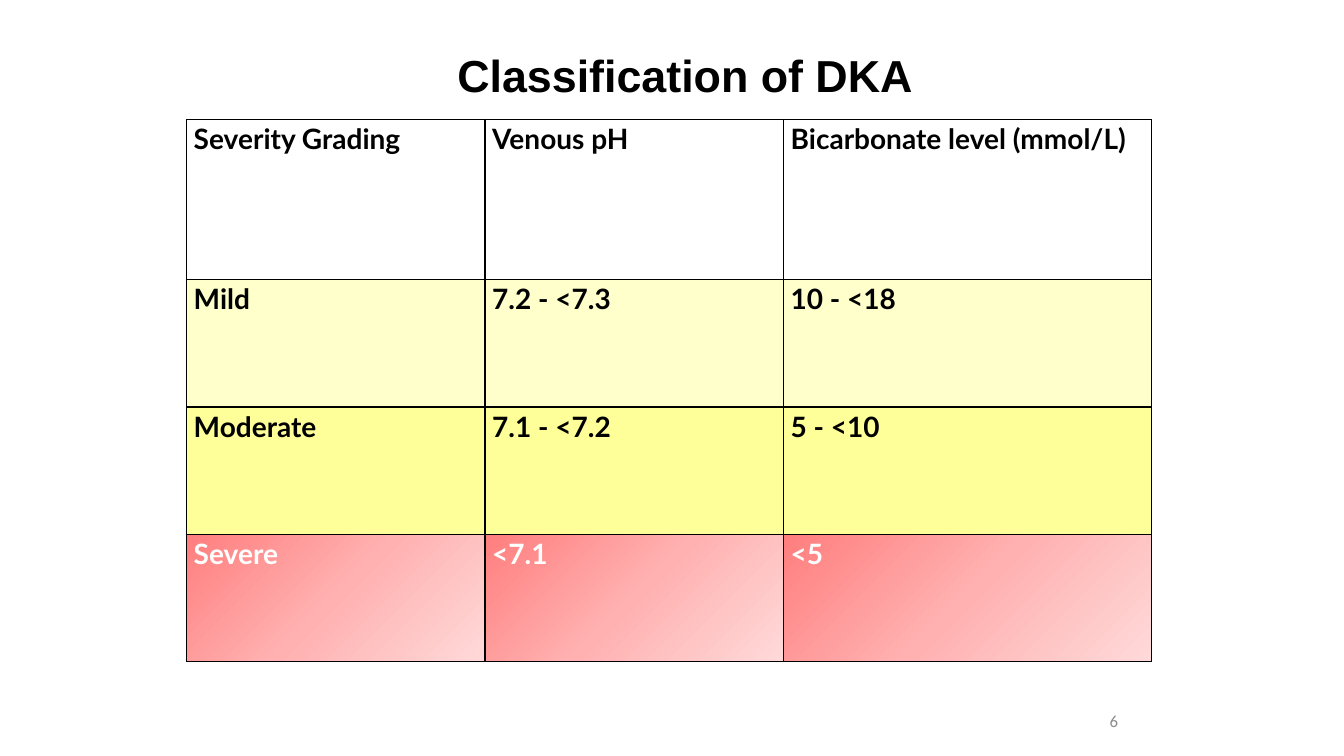
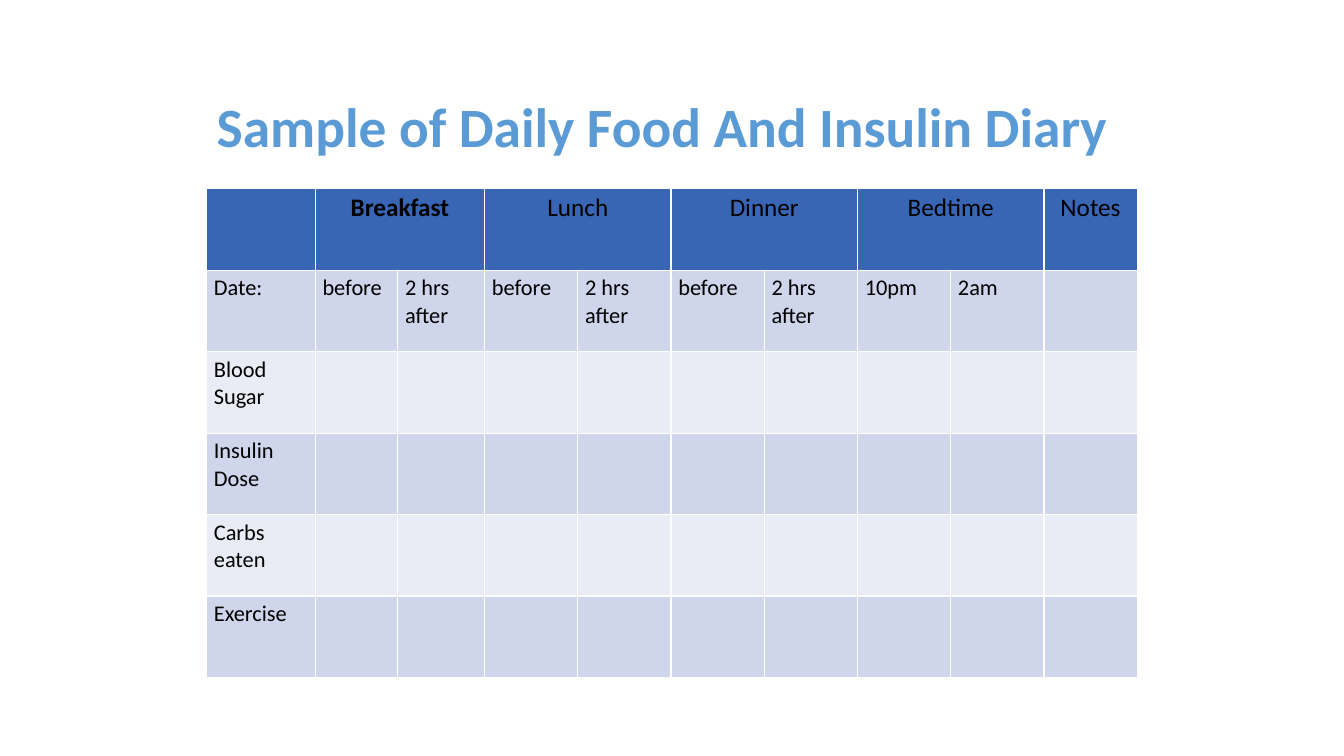
from lxml import etree
from pptx import Presentation
from pptx.dml.color import RGBColor
from pptx.enum.text import MSO_ANCHOR, MSO_AUTO_SIZE, PP_ALIGN
from pptx.oxml.ns import qn
from pptx.util import Pt

LEFT, CENTER, RIGHT = PP_ALIGN.LEFT, PP_ALIGN.CENTER, PP_ALIGN.RIGHT
MIDDLE = MSO_ANCHOR.MIDDLE
NO_AUTOFIT = MSO_AUTO_SIZE.NONE

BLACK = RGBColor(0x00, 0x00, 0x00)
WHITE = RGBColor(0xFF, 0xFF, 0xFF)
GRAY = RGBColor(0x8C, 0x8C, 0x8C)
TITLE_BLUE = RGBColor(0x5B, 0x9B, 0xD5)
HEADER_BLUE = RGBColor(0x39, 0x65, 0xB5)
BAND_DARK = RGBColor(0xCF, 0xD5, 0xEA)
BAND_LIGHT = RGBColor(0xE9, 0xEB, 0xF5)
PALE_YELLOW = RGBColor(0xFF, 0xFF, 0xCC)
YELLOW = RGBColor(0xFF, 0xFF, 0x99)
RED_GRADIENT = (
    (0, RGBColor(0xFF, 0x7E, 0x7E)),
    (50, RGBColor(0xFF, 0xB1, 0xB1)),
    (100, RGBColor(0xFF, 0xD9, 0xD9)),
)
GRADIENT_ANGLE = 45

SEVERITY_ROWS = [
    (("Severity Grading", "Venous pH", "Bicarbonate level (mmol/L)"), None, BLACK),
    (("Mild", "7.2 - <7.3", "10 - <18"), PALE_YELLOW, BLACK),
    (("Moderate", "7.1 - <7.2", "5 - <10"), YELLOW, BLACK),
    (("Severe", "<7.1", "<5"), RED_GRADIENT, WHITE),
]
SEVERITY_WIDTHS = [213.2, 213.2, 263]
SEVERITY_HEIGHTS = [114.4] + [91] * 3

MEALS = [("", 1), ("Breakfast", 2), ("Lunch", 2), ("Dinner", 2), ("Bedtime", 2), ("Notes", 1)]
DIARY_ROWS = [
    ["Date:"] + ["before", "2 hrs after"] * 3 + ["10pm", "2am"],
    ["Blood Sugar"],
    ["Insulin Dose"],
    ["Carbs eaten"],
    ["Exercise"],
]
DIARY_WIDTHS = [77.6, 59, 62] + [66.6] * 7
DIARY_HEIGHTS = [58.2] * (len(DIARY_ROWS) + 1)


def write_text(frame, text, font="Calibri", size=18, color=BLACK, bold=False,
               align=LEFT, line_spacing=None):
    frame.text = text
    paragraph = frame.paragraphs[0]
    paragraph.alignment = align
    if line_spacing:
        paragraph.line_spacing = line_spacing
    run_font = paragraph.runs[0].font
    run_font.name, run_font.size, run_font.bold = font, Pt(size), bold
    run_font.color.rgb = color


def set_frame(frame, side, top_bottom):
    frame.word_wrap = True
    frame.auto_size = NO_AUTOFIT
    frame.vertical_anchor = MIDDLE
    frame.margin_left = frame.margin_right = Pt(side)
    frame.margin_top = frame.margin_bottom = Pt(top_bottom)


def add_titled_slide(presentation, text, box, side, **text_format):
    slide = presentation.slides.add_slide(presentation.slide_layouts[5])
    title = slide.shapes.title
    title.left, title.top, title.width, title.height = map(Pt, box)
    set_frame(title.text_frame, side, 3.6)
    write_text(title.text_frame, text, bold=True, **text_format)
    return slide


def add_grid(slide, left, top, widths, heights):
    table = slide.shapes.add_table(len(heights), len(widths), Pt(left), Pt(top),
                                   Pt(sum(widths)), Pt(sum(heights))).table
    table.first_row = table.horz_banding = False
    for column, width in zip(table.columns, widths):
        column.width = Pt(width)
    for row, height in zip(table.rows, heights):
        row.height = Pt(height)
    return table


def add_solid_color(parent, color):
    fill = etree.SubElement(parent, qn("a:solidFill"))
    etree.SubElement(fill, qn("a:srgbClr"), val=str(color))


def style_cell(cell, fill, border, top_bottom):
    cell.margin_left = cell.margin_right = Pt(5.2)
    cell.margin_top = cell.margin_bottom = Pt(top_bottom)
    properties = cell._tc.get_or_add_tcPr()
    for edge in ("a:lnL", "a:lnR", "a:lnT", "a:lnB"):
        add_solid_color(etree.SubElement(properties, qn(edge), w=str(Pt(1))), border)
    if fill is None:
        cell.fill.background()
    elif isinstance(fill, RGBColor):
        cell.fill.solid()
        cell.fill.fore_color.rgb = fill
    else:
        gradient = etree.SubElement(properties, qn("a:gradFill"), rotWithShape="1")
        stops = etree.SubElement(gradient, qn("a:gsLst"))
        for position, color in fill:
            stop = etree.SubElement(stops, qn("a:gs"), pos=str(position * 1000))
            etree.SubElement(stop, qn("a:srgbClr"), val=str(color))
        etree.SubElement(gradient, qn("a:lin"), ang=str(GRADIENT_ANGLE * 60000), scaled="1")


def build_classification(presentation):
    slide = add_titled_slide(presentation, "Classification of DKA", (156.2, 21.6, 666.7, 63.4), 5,
                             font="Arial", size=32, align=CENTER)
    page_number = slide.shapes.add_textbox(Pt(635.8), Pt(500.4), Pt(167.8), Pt(28.8))
    set_frame(page_number.text_frame, 5, 3)
    write_text(page_number.text_frame, "6", size=12, color=GRAY, align=RIGHT)

    table = add_grid(slide, 133.2, 85.3, SEVERITY_WIDTHS, SEVERITY_HEIGHTS)
    for row, (texts, fill, color) in zip(table.rows, SEVERITY_ROWS):
        for cell, text in zip(row.cells, texts):
            style_cell(cell, fill, BLACK, 0)
            write_text(cell.text_frame, text, font="Lato", size=20, color=color,
                       bold=True, line_spacing=1.07)


def build_diary(presentation):
    slide = add_titled_slide(presentation, "Sample of Daily Food And Insulin Diary",
                             (147.6, 56.2, 676.8, 72), 7.2,
                             size=39.6, color=TITLE_BLUE, line_spacing=0.9)
    table = add_grid(slide, 147.6, 134.8, DIARY_WIDTHS, DIARY_HEIGHTS)
    for index, row in enumerate(table.rows):
        band = BAND_DARK if index % 2 else BAND_LIGHT
        for cell in row.cells:
            style_cell(cell, band if index else HEADER_BLUE, WHITE, 3)

    column = 0
    for meal, span in MEALS:
        cell = table.cell(0, column)
        if span > 1:
            cell.merge(table.cell(0, column + span - 1))
        if meal:
            write_text(cell.text_frame, meal, bold=meal == "Breakfast", align=CENTER)
        column += span

    for row_index, texts in enumerate(DIARY_ROWS, start=1):
        for column_index, text in enumerate(texts):
            write_text(table.cell(row_index, column_index).text_frame, text, size=16)


def main():
    presentation = Presentation()
    presentation.slide_width, presentation.slide_height = Pt(960), Pt(540)
    build_classification(presentation)
    build_diary(presentation)
    presentation.save("out.pptx")


if __name__ == "__main__":
    main()
